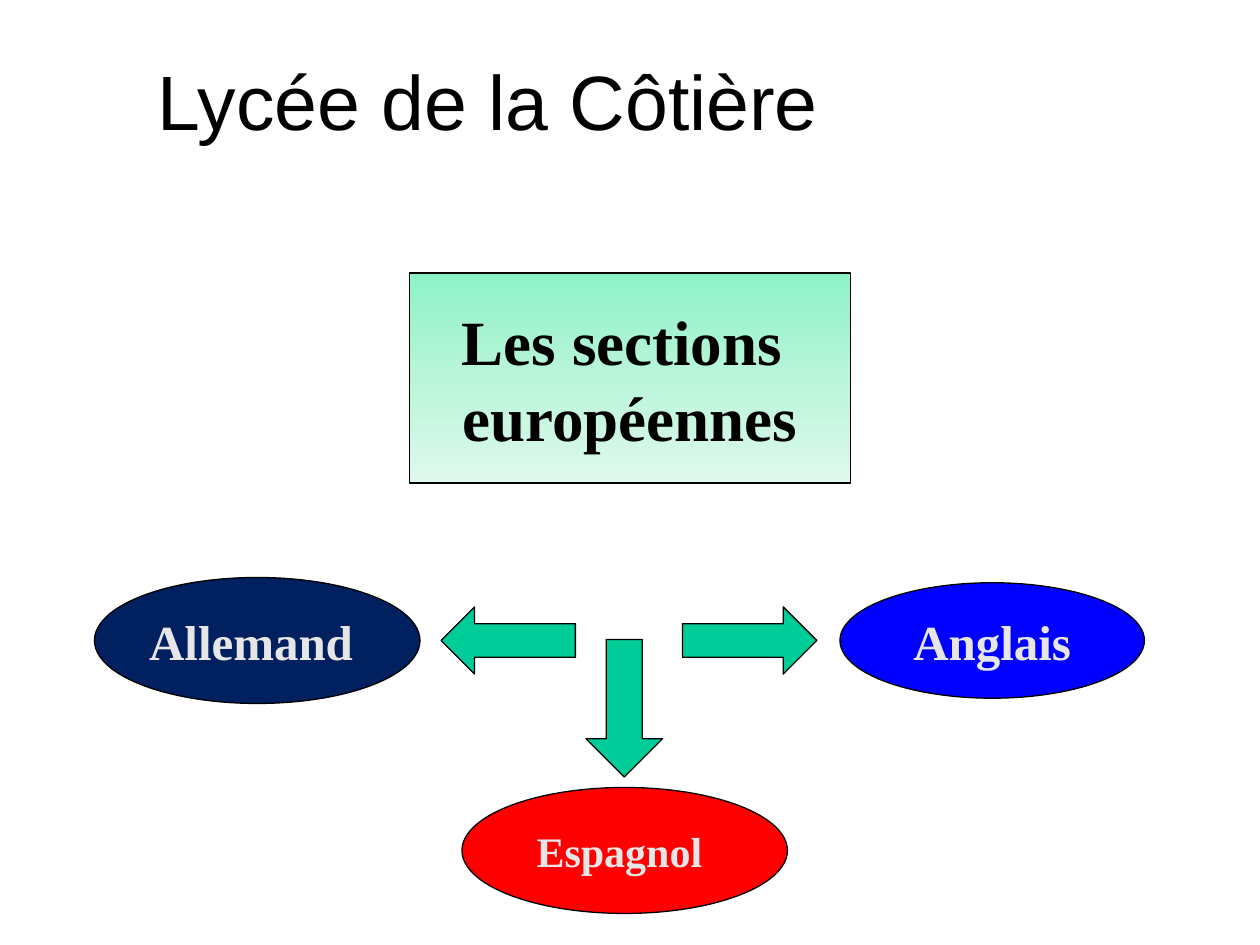
from copy import deepcopy

from pptx import Presentation
from pptx.dml.color import RGBColor
from pptx.enum.shapes import MSO_SHAPE
from pptx.enum.text import MSO_ANCHOR, PP_ALIGN
from pptx.util import Inches, Pt

RECTANGLE, ELLIPSE = MSO_SHAPE.RECTANGLE, MSO_SHAPE.OVAL
LEFT_ARROW, RIGHT_ARROW = MSO_SHAPE.LEFT_ARROW, MSO_SHAPE.RIGHT_ARROW
MIDDLE, CENTER = MSO_ANCHOR.MIDDLE, PP_ALIGN.CENTER

BLACK = RGBColor(0x00, 0x00, 0x00)
PALE_GREY = RGBColor(0xE6, 0xE6, 0xE6)
GREEN = RGBColor(0x00, 0xCC, 0x99)
NAVY = RGBColor(0x00, 0x20, 0x60)
BLUE = RGBColor(0x00, 0x00, 0xFF)
RED = RGBColor(0xFF, 0x00, 0x00)
MINT_STOPS = [
    (0, RGBColor(0x8C, 0xF2, 0xC6)),
    (0.5, RGBColor(0xBA, 0xF5, 0xDA)),
    (1, RGBColor(0xDE, 0xF9, 0xEC)),
]

# Grid of 120 columns by 90 rows; boxes are (column, row, columns, rows)
CELL = Inches(10) / 120
MIDDLE_ROW = 61

TITLE_BOX = (4, 2, 85, 15)
HUB_BOX = (39, 26, 42, 20)

# Text, size, fill, box
LANGUAGES = [
    ("Allemand ", 28, NAVY, (9, MIDDLE_ROW - 6, 31, 12)),
    ("Anglais", 28, BLUE, (80, MIDDLE_ROW - 5.5, 29, 11)),
    ("Espagnol ", 24, RED, (44, 75, 31, 12)),
]

# Kind, box, rotation, shaft share
ARROWS = [
    (LEFT_ARROW, (42, MIDDLE_ROW - 3.2, 12.8, 6.4), 0, 0.5),
    (RIGHT_ARROW, (65, MIDDLE_ROW - 3.2, 12.8, 6.4), 0, 0.5),
    (LEFT_ARROW, (52.9, 63.8, 13.1, 7.3), 270, 0.47),
]


def place(box):
    return [round(cells * CELL) for cells in box]


def add_outlined(page, kind, box):
    shape = page.shapes.add_shape(kind, *place(box))
    shape.shadow.inherit = False
    shape.line.color.rgb = BLACK
    shape.line.width = Pt(0.75)
    return shape


def fill_solid(shape, color):
    shape.fill.solid()
    shape.fill.fore_color.rgb = color


def write(shape, lines, font_name, size, color, bold=False):
    frame = shape.text_frame
    frame.text = "\n".join(lines)
    frame.vertical_anchor = MIDDLE
    for para in frame.paragraphs:
        para.alignment = CENTER
        para.font.name = font_name
        para.font.size = Pt(size)
        para.font.bold = bold
        para.font.color.rgb = color


def add_title(page, box):
    title = page.shapes.title
    title.left, title.top, title.width, title.height = place(box)
    write(title, ["Lycée de la Côtière"], "Arial", 44, BLACK)


def add_hub(page, box):
    hub = add_outlined(page, RECTANGLE, box)
    hub.fill.gradient()
    hub.fill.gradient_angle = 270
    # A new gradient has two stops: add the middle one
    first_stop = hub._element.spPr.find(".//{*}gs")
    first_stop.addnext(deepcopy(first_stop))
    for stop, (position, color) in zip(hub.fill.gradient_stops, MINT_STOPS):
        stop.position = position
        stop.color.rgb = color
    hub.text_frame.word_wrap = False
    write(hub, ["Les sections ", "européennes"], "Times New Roman", 36, BLACK, True)


def add_language(page, text, size, color, box):
    bubble = add_outlined(page, ELLIPSE, box)
    fill_solid(bubble, color)
    bubble.text_frame.word_wrap = False
    write(bubble, [text], "Times New Roman", size, PALE_GREY, True)


def add_arrow(page, kind, box, rotation, shaft):
    arrow = add_outlined(page, kind, box)
    fill_solid(arrow, GREEN)
    arrow.rotation = rotation
    arrow.adjustments[0] = shaft
    arrow.adjustments[1] = 0.5


def main():
    deck = Presentation()
    deck.slide_width, deck.slide_height = Inches(10), Inches(7.5)
    page = deck.slides.add_slide(deck.slide_layouts[5])

    add_title(page, TITLE_BOX)
    add_hub(page, HUB_BOX)
    for arrow in ARROWS:
        add_arrow(page, *arrow)
    for language in LANGUAGES:
        add_language(page, *language)

    deck.save("out.pptx")


if __name__ == "__main__":
    main()
